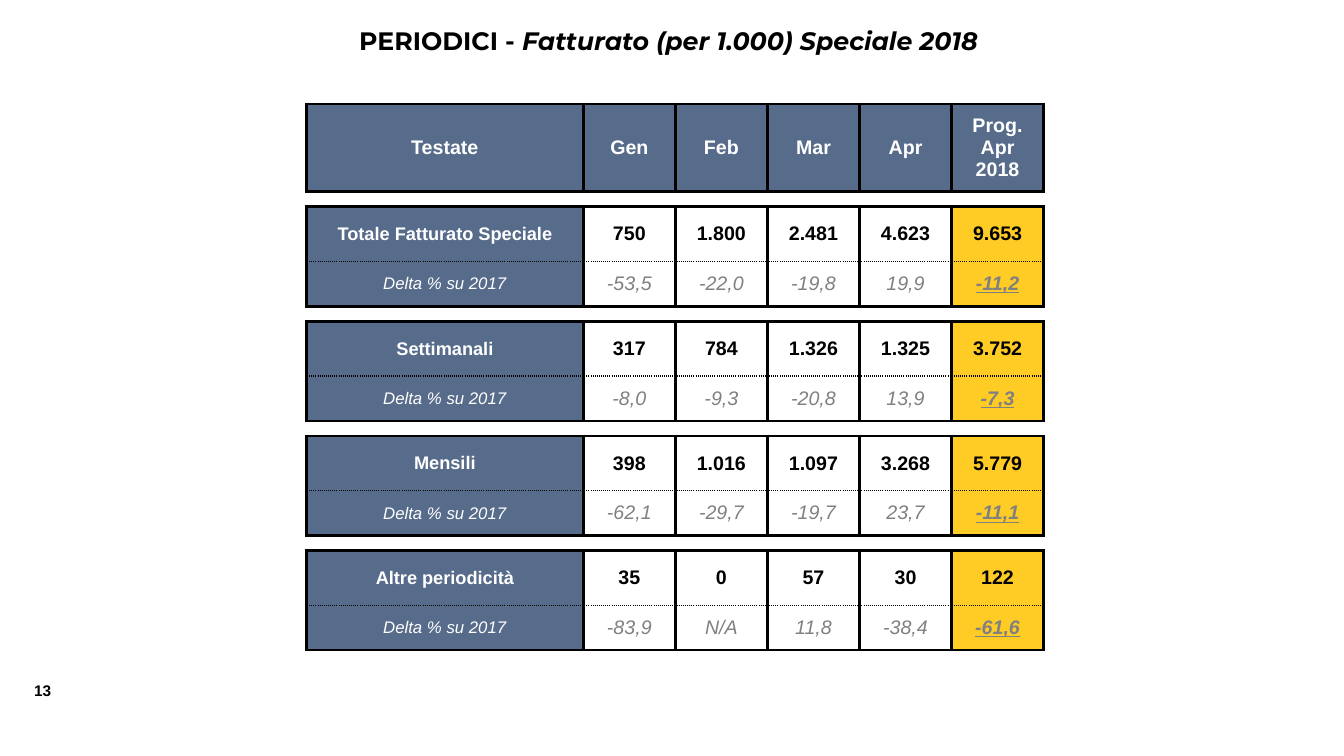
from lxml.etree import SubElement
from pptx import Presentation
from pptx.dml.color import RGBColor as RGB
from pptx.enum.text import MSO_ANCHOR as ANCHOR, PP_ALIGN as ALIGN
from pptx.oxml.ns import qn
from pptx.util import Cm, Pt

COLORS = {"black": "000000", "white": "FFFFFF", "blue": "576B8A",
          "yellow": "FFCB25", "gray": "808080"}

HEADERS = ["Testate", "Gen", "Feb", "Mar", "Apr", "Prog.\vApr\n2018"]
DELTA = "Delta % su 2017"
GROUPS = [
    (["Totale Fatturato Speciale", "750", "1.800", "2.481", "4.623", "9.653"],
     [DELTA, "-53,5", "-22,0", "-19,8", "19,9", "-11,2"]),
    (["Settimanali", "317", "784", "1.326", "1.325", "3.752"],
     [DELTA, "-8,0", "-9,3", "-20,8", "13,9", "-7,3"]),
    (["Mensili", "398", "1.016", "1.097", "3.268", "5.779"],
     [DELTA, "-62,1", "-29,7", "-19,7", "23,7", "-11,1"]),
    (["Altre periodicità", "35", "0", "57", "30", "122"],
     [DELTA, "-83,9", "N/A", "11,8", "-38,4", "-61,6"]),
]
COL_WIDTHS = [6.98] + [2.32] * 5
HEADER_H, GAP_H, VALUE_H, DELTA_H = 2.21, 0.38, 1.38, 1.13
HEAVY, DOTTED = (2.25, "solid"), (1, "sysDot")


def add_run(p, text, size, color="black", font="Arial", bold=True,
            italic=False, underline=False):
    r = p.add_run()
    r.text = text
    f = r.font
    f.name, f.size, f.bold, f.italic = font, Pt(size), bold, italic
    f.underline = underline
    f.color.rgb = RGB.from_string(COLORS[color])


def set_borders(cell, left, right, top, bottom):
    """Lines come before the fill, so call this before fill_cell."""
    tcPr = cell._tc.get_or_add_tcPr()
    for side, line in zip("LRTB", (left, right, top, bottom)):
        ln = SubElement(tcPr, qn(f"a:ln{side}"))
        if line is None:
            SubElement(ln, qn("a:noFill"))
            continue
        width, dash = line
        ln.set("w", str(Pt(width)))
        fill = SubElement(ln, qn("a:solidFill"))
        SubElement(fill, qn("a:srgbClr"), val=COLORS["black"])
        SubElement(ln, qn("a:prstDash"), val=dash)


def fill_cell(cell, color):
    cell.fill.solid()
    cell.fill.fore_color.rgb = RGB.from_string(COLORS[color])


def set_margins(cell, x, y):
    cell.margin_left = cell.margin_right = Cm(x)
    cell.margin_top = cell.margin_bottom = Cm(y)


def write_cell(cell, text, **style):
    cell.vertical_anchor = ANCHOR.MIDDLE
    tf = cell.text_frame
    for i, paragraph in enumerate(text.split("\n")):
        p = tf.add_paragraph() if i else tf.paragraphs[0]
        p.alignment = ALIGN.CENTER
        for j, line in enumerate(paragraph.split("\v")):
            if j:
                p.add_line_break()
            add_run(p, line, **style)


def header_row(cells):
    for cell, text in zip(cells, HEADERS):
        set_borders(cell, HEAVY, HEAVY, HEAVY, HEAVY)
        fill_cell(cell, "blue")
        set_margins(cell, 0.25, 0.13)
        write_cell(cell, text, size=14, color="white")


def gap_row(cells):
    for cell in cells:
        set_borders(cell, None, None, HEAVY, HEAVY)
        fill_cell(cell, "white")
        set_margins(cell, 0, 0)
        # A tiny font keeps the empty row low
        SubElement(cell.text_frame.paragraphs[0]._p, qn("a:endParaRPr"), sz="100")


def data_row(cells, texts, delta):
    top, bottom = (DOTTED, HEAVY) if delta else (HEAVY, DOTTED)
    last = len(texts) - 1
    for c, (cell, text) in enumerate(zip(cells, texts)):
        set_borders(cell, HEAVY, HEAVY, top, bottom)
        if c == 0:
            fill_cell(cell, "blue")
            set_margins(cell, 0.25, 0.13)
            write_cell(cell, text, size=12 if delta else 13, color="white",
                       bold=not delta, italic=delta)
        else:
            total = c == last
            fill_cell(cell, "yellow" if total else "white")
            set_margins(cell, 0, 0)
            write_cell(cell, text, size=14, color="gray" if delta else "black",
                       bold=total or not delta, italic=delta,
                       underline=total and delta)


def add_revenue_table(s, x, y):
    heights = [HEADER_H] + [GAP_H, VALUE_H, DELTA_H] * len(GROUPS)
    table = s.shapes.add_table(len(heights), len(COL_WIDTHS), Cm(x), Cm(y),
                               Cm(sum(COL_WIDTHS)), Cm(sum(heights))).table
    table.first_row = table.horz_banding = False
    for col, width in zip(table.columns, COL_WIDTHS):
        col.width = Cm(width)
    for row, height in zip(table.rows, heights):
        row.height = Cm(height)

    rows = [row.cells for row in table.rows]
    header_row(rows[0])
    for g, (values, deltas) in enumerate(GROUPS):
        first = 1 + 3 * g
        gap_row(rows[first])
        data_row(rows[first + 1], values, delta=False)
        data_row(rows[first + 2], deltas, delta=True)


def add_title(s, x, y, w, h):
    tf = s.shapes.add_textbox(Cm(x), Cm(y), Cm(w), Cm(h)).text_frame
    tf.word_wrap = True
    tf.margin_left = Cm(0.81)
    p = tf.paragraphs[0]
    p.alignment = ALIGN.CENTER
    add_run(p, "PERIODICI - ", 18, font="Montserrat")
    add_run(p, "Fatturato (per 1.000) Speciale 2018", 18, font="Montserrat",
            italic=True)


def add_page_number(s, x, y, w, h):
    tf = s.shapes.add_textbox(Cm(x), Cm(y), Cm(w), Cm(h)).text_frame
    tf.word_wrap = False
    add_run(tf.paragraphs[0], "13", 11)


def main():
    prs = Presentation()
    prs.slide_width, prs.slide_height = Cm(33.87), Cm(19.05)
    s = prs.slides.add_slide(prs.slide_layouts[6])
    add_page_number(s, 0.61, 17.04, 1.07, 0.74)
    add_title(s, 4.57, 0.51, 24, 1.02)
    add_revenue_table(s, 7.72, 2.62)
    prs.save("out.pptx")


if __name__ == "__main__":
    main()
